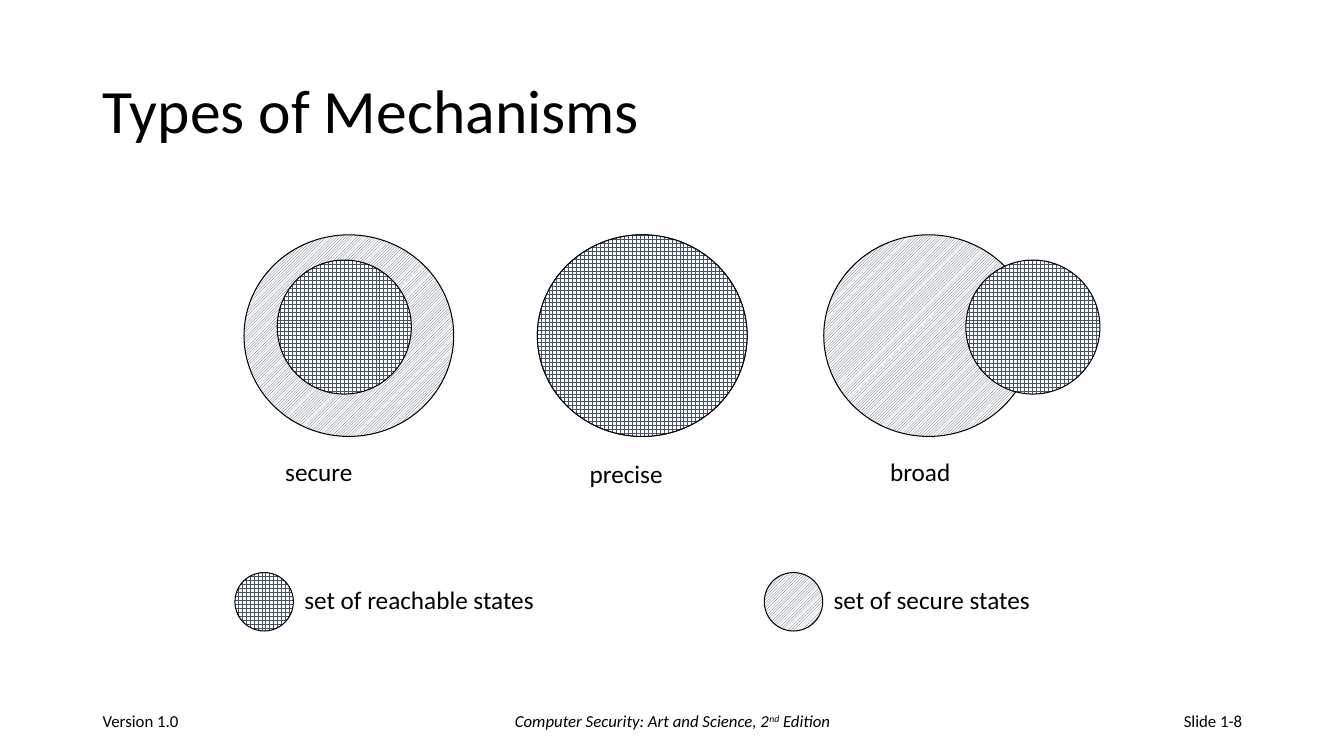
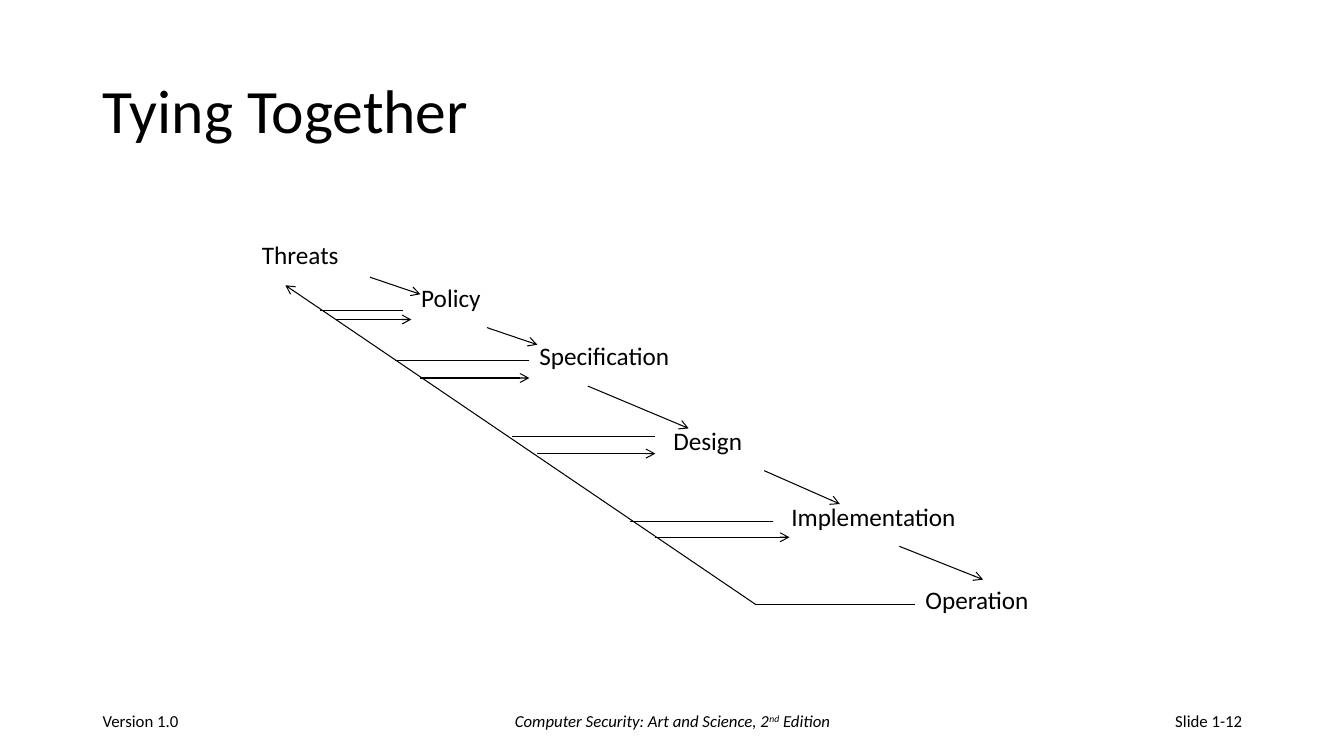
from dataclasses import dataclass

from lxml.etree import SubElement
from pptx import Presentation
from pptx.dml.color import RGBColor
from pptx.enum.dml import MSO_PATTERN
from pptx.enum.shapes import MSO_CONNECTOR, MSO_SHAPE
from pptx.enum.text import MSO_ANCHOR, PP_ALIGN
from pptx.oxml.ns import qn
from pptx.slide import Slide
from pptx.text.text import TextFrame
from pptx.util import Inches, Pt

COLORS = {"ink": "000000", "hatch": "44546A", "paper": "FFFFFF"}
FONT = "Calibri"
SECURE = MSO_PATTERN.LIGHT_UPWARD_DIAGONAL
REACHED = MSO_PATTERN.LARGE_GRID


@dataclass(frozen=True)
class Disc:
    left: float
    top: float
    width: float
    height: float
    pattern: MSO_PATTERN


@dataclass(frozen=True)
class Label:
    text: str
    left: float
    top: float
    width: float


@dataclass(frozen=True)
class Line:
    x1: float
    y1: float
    x2: float
    y2: float
    arrow: bool = True


@dataclass(frozen=True)
class Run:
    text: str
    italic: bool = False
    raised: bool = False


@dataclass(frozen=True)
class Footer:
    left: float
    width: float
    align: PP_ALIGN
    runs: tuple[Run, ...]


DISCS = (
    Disc(2.42, 2.33, 2.08, 2, SECURE),
    Disc(2.75, 2.58, 1.33, 1.33, REACHED),
    Disc(5.33, 2.33, 2.08, 2, SECURE),
    Disc(5.33, 2.33, 2.08, 2, REACHED),
    Disc(8.17, 2.33, 2.08, 2, SECURE),
    Disc(9.58, 2.58, 1.33, 1.33, REACHED),
    Disc(2.33, 5.68, 0.58, 0.58, REACHED),
    Disc(7.58, 5.68, 0.58, 0.58, SECURE),
)
KINDS = (
    Label("secure", 2.73, 4.48, 0.88),
    Label("precise", 5.75, 4.5, 0.93),
    Label("broad", 8.73, 4.48, 0.81),
    Label("set of reachable states", 2.92, 5.75, 2.5),
    Label("set of secure states", 8.17, 5.75, 2.17),
)
STAGES = (
    Label("Threats", 2.5, 2.33, 0.97),
    Label("Policy", 4.08, 2.75, 0.8),
    Label("Specification", 5.25, 3.33, 1.51),
    Label("Design", 6.58, 4.17, 0.89),
    Label("Implementation", 7.75, 4.92, 1.85),
    Label("Operation", 9.08, 5.75, 1.24),
)
STEPS = (
    Line(3.67, 2.75, 4.17, 2.92),
    Line(4.83, 3.25, 5.33, 3.42),
    Line(5.83, 3.83, 6.83, 4.25),
    Line(7.58, 4.67, 8.33, 5),
    Line(8.92, 5.42, 9.75, 5.75),
)
RETURNS = (
    Line(7.5, 6, 2.83, 2.83),
    Line(7.5, 6, 9.08, 6, False),
    Line(7.67, 5.17, 6.25, 5.17, False),
    Line(6.5, 5.33, 7.83, 5.33),
    Line(6.5, 4.33, 5.08, 4.33, False),
    Line(5.33, 4.5, 6.5, 4.5),
    Line(5.25, 3.58, 3.92, 3.58, False),
    Line(4.17, 3.75, 5.25, 3.75),
    Line(4, 3.08, 3.17, 3.08, False),
    Line(3.33, 3.17, 4.08, 3.17),
)
BOOK = (
    Run("Computer Security: Art and Science, 2", True),
    Run("nd", True, True),
    Run(" Edition", True),
)


def tint(name: str) -> RGBColor:
    return RGBColor.from_string(COLORS[name])


def add_text(slide: Slide, left: float, top: float, width: float, height: float,
             runs: tuple[Run, ...], size: int, wrap: bool = True,
             align: PP_ALIGN = PP_ALIGN.LEFT) -> TextFrame:
    box = slide.shapes.add_textbox(Inches(left), Inches(top), Inches(width), Inches(height))
    frame = box.text_frame
    frame.word_wrap = wrap
    frame.vertical_anchor = MSO_ANCHOR.MIDDLE if wrap else MSO_ANCHOR.TOP
    line = frame.paragraphs[0]
    line.alignment = align
    for part in runs:
        run = line.add_run()
        run.text = part.text
        run.font.name = FONT
        run.font.size = Pt(size)
        run.font.italic = part.italic
        run.font.color.rgb = tint("ink")
        if part.raised:
            run.font._element.set("baseline", "30000")
    return frame


def add_label(slide: Slide, label: Label) -> None:
    add_text(slide, label.left, label.top, label.width, 0.4, (Run(label.text),), 18, wrap=False)


def add_disc(slide: Slide, disc: Disc) -> None:
    shape = slide.shapes.add_shape(MSO_SHAPE.OVAL, Inches(disc.left), Inches(disc.top),
                                   Inches(disc.width), Inches(disc.height))
    shape.shadow.inherit = False
    shape.fill.patterned()
    shape.fill.pattern = disc.pattern
    shape.fill.fore_color.rgb = tint("hatch")
    shape.fill.back_color.rgb = tint("paper")
    shape.line.color.rgb = tint("ink")
    shape.line.width = Pt(0.75)


def add_line(slide: Slide, line: Line) -> None:
    link = slide.shapes.add_connector(MSO_CONNECTOR.STRAIGHT, Inches(line.x1), Inches(line.y1),
                                      Inches(line.x2), Inches(line.y2))
    link.line.color.rgb = tint("ink")
    link.line.width = Pt(0.75)
    props = link._element.spPr
    if line.arrow:
        SubElement(props.find(qn("a:ln")), qn("a:tailEnd"), type="arrow")
    SubElement(props, qn("a:effectLst"))


def add_slide(deck: Presentation, title: str, number: str) -> Slide:
    slide = deck.slides.add_slide(deck.slide_layouts[6])
    head = add_text(slide, 0.92, 0.4, 11.5, 1.45, (Run(title),), 44)
    head.paragraphs[0].line_spacing = 0.9
    for foot in (
        Footer(0.92, 3, PP_ALIGN.LEFT, (Run("Version 1.0"),)),
        Footer(4.42, 4.5, PP_ALIGN.CENTER, BOOK),
        Footer(9.42, 3, PP_ALIGN.RIGHT, (Run(f"Slide {number}"),)),
    ):
        add_text(slide, foot.left, 6.95, foot.width, 0.4, foot.runs, 12, align=foot.align)
    return slide


def main() -> None:
    deck = Presentation()
    deck.slide_width = Inches(13.33)
    deck.slide_height = Inches(7.5)

    types = add_slide(deck, "Types of Mechanisms", "1-8")
    for disc in DISCS:
        add_disc(types, disc)
    for label in KINDS:
        add_label(types, label)

    cycle = add_slide(deck, "Tying Together", "1-12")
    for label in STAGES:
        add_label(cycle, label)
    for line in STEPS + RETURNS:
        add_line(cycle, line)

    deck.save("out.pptx")


if __name__ == "__main__":
    main()
